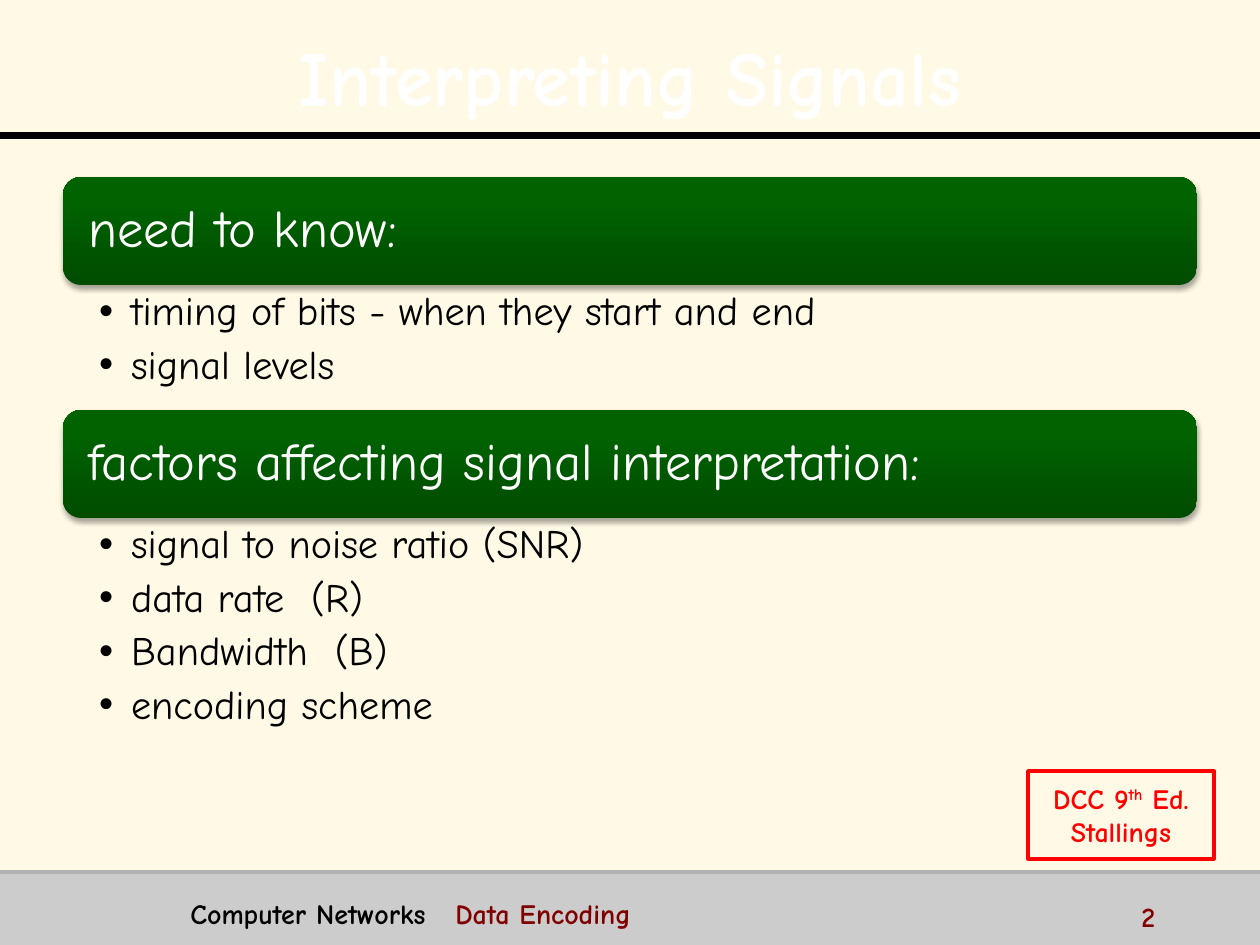
from dataclasses import dataclass

from lxml.etree import SubElement
from pptx import Presentation
from pptx.dml.color import RGBColor as Color
from pptx.enum.shapes import MSO_CONNECTOR as Connector, MSO_SHAPE as Shape
from pptx.enum.text import MSO_ANCHOR as Anchor, MSO_AUTO_SIZE as AutoSize, PP_ALIGN as Align
from pptx.oxml import parse_xml
from pptx.oxml.ns import nsdecls, qn
from pptx.util import Emu, Pt

WIDTH, HEIGHT = 1260, 945
SCALE = 9144000 / WIDTH
PANEL_LEFT, PANEL_WIDTH, PANEL_TOP = 63, 1134, 177
HEADER_HEIGHT, HEADER_STEP = 108, 109
FOOTER_TOP = 872


@dataclass(frozen=True)
class Theme:
    font: str = "Comic Neue"
    background: str = "FFF9E6"
    footer: str = "CCCCCC"
    footer_rule: str = "B2B2B2"
    dark: str = "000000"
    light: str = "FFFFFF"
    maroon: str = "800000"
    red: str = "FF0000"
    green_low: str = "004C00"
    green_high: str = "006300"
    title_size: int = 44
    header_size: int = 30
    list_size: int = 23
    small_size: int = 16


THEME = Theme()
PANELS = [
    ("need to know:", ["timing of bits - when they start and end", "signal levels"], 124),
    ("factors affecting signal interpretation:",
     ["signal to noise ratio (SNR)", "data rate  (R)", "Bandwidth  (B)", "encoding scheme"], 248),
]


def px(value):
    return Emu(round(value * SCALE))


def rgb(value):
    return Color.from_string(value)


def place(shape, left, top, width, height):
    shape.left, shape.top = px(left), px(top)
    shape.width, shape.height = px(width), px(height)


def set_insets(frame, left, top, right, bottom):
    frame.margin_left, frame.margin_top = px(left), px(top)
    frame.margin_right, frame.margin_bottom = px(right), px(bottom)


def format_run(run, size, color, bold=False):
    font = run.font
    font.name, font.size, font.bold = THEME.font, Pt(size), bold
    font.color.rgb = rgb(color)


def add_run(paragraph, text, color):
    run = paragraph.add_run()
    run.text = text
    format_run(run, THEME.small_size, color, bold=True)
    return run


def shadow_effect(blur, distance, angle, opacity):
    return parse_xml(
        f'<a:effectLst {nsdecls("a")}>'
        f'<a:outerShdw blurRad="{Pt(blur)}" dist="{Pt(distance)}" dir="{angle * 60000}" rotWithShape="0">'
        f'<a:srgbClr val="{THEME.dark}"><a:alpha val="{opacity * 1000}"/></a:srgbClr>'
        f'</a:outerShdw></a:effectLst>')


def add_box(slide, kind, left, top, width, height):
    shape = slide.shapes.add_shape(kind, px(left), px(top), px(width), px(height))
    shape.shadow.inherit = False
    shape.line.fill.background()
    return shape


def add_rule(slide, top, color, weight):
    rule = slide.shapes.add_connector(Connector.STRAIGHT, 0, px(top), px(WIDTH), px(top))
    rule.line.color.rgb = rgb(color)
    rule.line.width = Pt(weight)
    SubElement(rule.element.spPr, qn("a:effectLst"))


def add_title(slide, text):
    title = slide.shapes.title
    place(title, 25, 16, 1210, 110)
    frame = title.text_frame
    frame.text = text
    frame.auto_size = AutoSize.NONE
    frame.vertical_anchor = Anchor.MIDDLE
    paragraph = frame.paragraphs[0]
    paragraph.alignment = Align.CENTER
    paragraph.line_spacing = 1.1
    run = paragraph.runs[0]
    format_run(run, THEME.title_size, THEME.light, bold=True)
    run.font.fill._xPr.find(qn("a:solidFill")).addnext(shadow_effect(0, 2, 45, 100))


def add_header(slide, text, top):
    header = add_box(slide, Shape.ROUNDED_RECTANGLE, PANEL_LEFT, top, PANEL_WIDTH, HEADER_HEIGHT)
    header.fill.gradient()
    header.fill.gradient_angle = 90
    stops = [(0, THEME.green_low), (0.8, THEME.green_high)]
    for stop, (position, color) in zip(header.fill.gradient_stops, stops):
        stop.position = position
        stop.color.rgb = rgb(color)
    properties = header.element.spPr
    properties.replace(properties.find(qn("a:effectLst")), shadow_effect(3.1, 1.8, 90, 35))
    frame = header.text_frame
    frame.text = text
    frame.vertical_anchor = Anchor.MIDDLE
    set_insets(frame, 20, 15, 20, 15)
    paragraph = frame.paragraphs[0]
    paragraph.alignment = Align.LEFT
    paragraph.line_spacing = 0.9
    format_run(paragraph.runs[0], THEME.header_size, THEME.light)


def fill_list(placeholder, items, top, height):
    place(placeholder, PANEL_LEFT, top, PANEL_WIDTH, height)
    frame = placeholder.text_frame
    frame.text = "\n".join(items)
    frame.auto_size = AutoSize.NONE
    frame.vertical_anchor = Anchor.TOP
    set_insets(frame, 36, 5, 29, 5)
    for paragraph in frame.paragraphs:
        paragraph.level = 1
        properties = paragraph._p.get_or_add_pPr()
        properties.set("marL", str(px(32)))
        properties.set("indent", str(px(-32)))
        SubElement(properties, qn("a:buChar"), char="•")
        paragraph.line_spacing = 0.9
        paragraph.space_before = Pt(0)
        paragraph.space_after = Pt(5.75)
        format_run(paragraph.runs[0], THEME.list_size, THEME.dark)


def add_label(slide, left, top, width, height):
    label = slide.shapes.add_textbox(px(left), px(top), px(width), px(height))
    label.text_frame.word_wrap = True
    return label.text_frame.paragraphs[0]


def add_footer(slide):
    band = add_box(slide, Shape.RECTANGLE, 0, FOOTER_TOP, WIDTH, HEIGHT - FOOTER_TOP)
    band.fill.solid()
    band.fill.fore_color.rgb = rgb(THEME.footer)
    add_rule(slide, FOOTER_TOP, THEME.footer_rule, 2)
    course = add_label(slide, 178, 890, 917, 39)
    tabs = SubElement(course._p.get_or_add_pPr(), qn("a:tabLst"))
    SubElement(tabs, qn("a:tab"), pos=str(px(265)), algn="l")
    add_run(course, "Computer Networks\t", THEME.dark)
    add_run(course, "Data Encoding", THEME.maroon)
    add_run(add_label(slide, 1129, 893, 126, 32), "2", THEME.maroon)


def add_reference(slide):
    box = add_box(slide, Shape.RECTANGLE, 1028, 771, 186, 88)
    box.fill.background()
    box.line.color.rgb = rgb(THEME.red)
    box.line.width = Pt(2)
    frame = box.text_frame
    frame.word_wrap = False
    frame.vertical_anchor = Anchor.MIDDLE
    edition, author = frame.paragraphs[0], frame.add_paragraph()
    edition.alignment = author.alignment = Align.CENTER
    add_run(edition, "DCC 9", THEME.red)
    ordinal = add_run(edition, "th", THEME.red)
    ordinal._r.get_or_add_rPr().set("baseline", "30000")
    add_run(edition, " Ed.", THEME.red)
    add_run(author, "Stallings", THEME.red)


def main():
    presentation = Presentation()
    presentation.slide_width, presentation.slide_height = px(WIDTH), px(HEIGHT)
    two_content = presentation.slide_layouts[3]
    slide = presentation.slides.add_slide(two_content)
    slide.background.fill.solid()
    slide.background.fill.fore_color.rgb = rgb(THEME.background)
    add_title(slide, "Interpreting Signals")
    add_rule(slide, 136, THEME.dark, 4)
    bodies = list(slide.placeholders)[1:]
    top = PANEL_TOP
    for body, (heading, items, height) in zip(bodies, PANELS):
        add_header(slide, heading, top)
        fill_list(body, items, top + HEADER_STEP, height)
        top += HEADER_STEP + height
    add_footer(slide)
    add_reference(slide)
    presentation.save("out.pptx")


if __name__ == "__main__":
    main()
